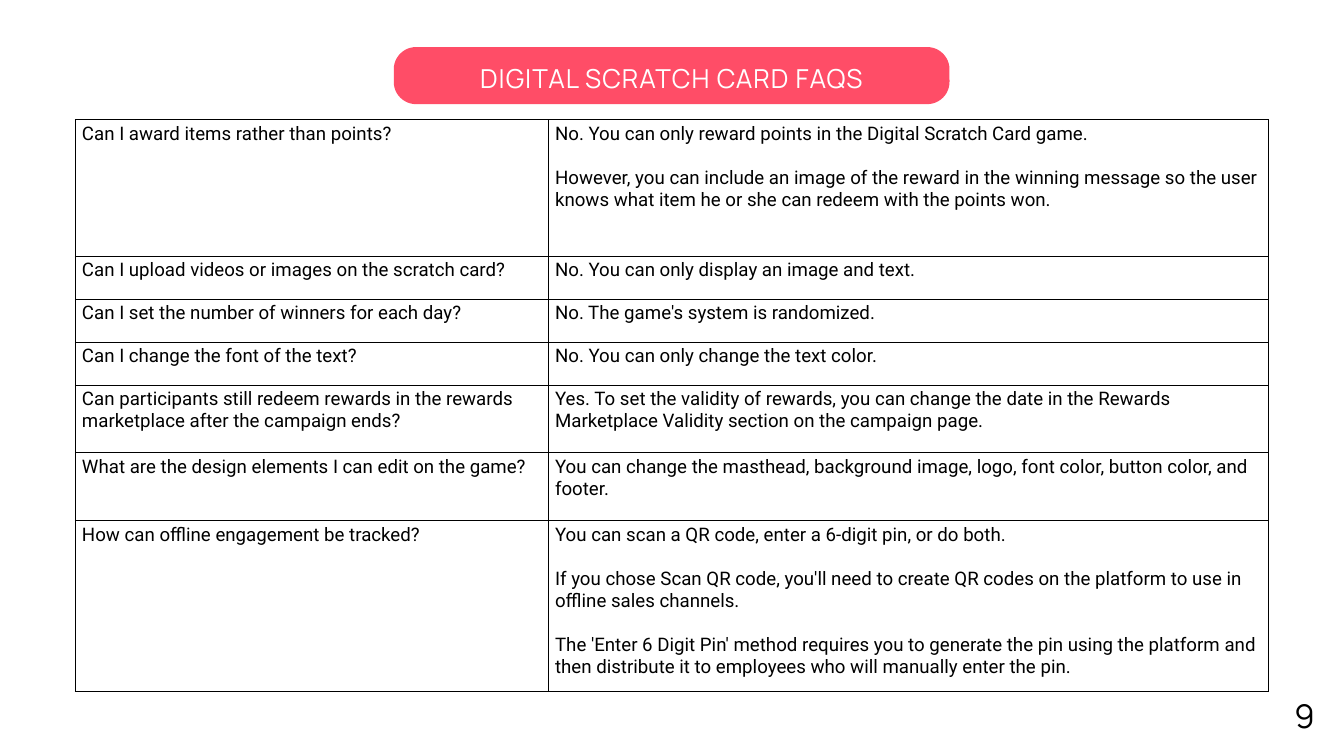
import pptx
import pptx.dml.color
import pptx.enum.shapes
import pptx.enum.text
import pptx.oxml
import pptx.oxml.ns
import pptx.util
from pptx.util import Inches

PINK = pptx.dml.color.RGBColor(0xFF, 0x4D, 0x67)
WHITE = pptx.dml.color.RGBColor(0xFF, 0xFF, 0xFF)
BLACK = pptx.dml.color.RGBColor(0x00, 0x00, 0x00)

FAQS = [
    (2.03, "Can I award items rather than points?",
     ["No. You can only reward points in the Digital Scratch Card game.",
      "However, you can include an image of the reward in the winning message so the user "
      "knows what item he or she can redeem with the points won."]),
    (0.64, "Can I upload videos or images on the scratch card?",
     ["No. You can only display an image and text."]),
    (0.64, "Can I set the number of winners for each day?",
     ["No. The game's system is randomized."]),
    (0.64, "Can I change the font of the text?",
     ["No. You can only change the text color."]),
    (1.01, "Can participants still redeem rewards in the rewards marketplace after the "
           "campaign ends?",
     ["Yes. To set the validity of rewards, you can change the date in the Rewards "
      "Marketplace Validity section on the campaign page."]),
    (1.01, "What are the design elements I can edit on the game?",
     ["You can change the masthead, background image, logo, font color, button color, "
      "and footer."]),
    (2.54, "How can offline engagement be tracked?",
     ["You can scan a QR code, enter a 6-digit pin, or do both.",
      "If you chose Scan QR code, you'll need to create QR codes on the platform to use in "
      "offline sales channels.",
      "The 'Enter 6 Digit Pin' method requires you to generate the pin using the platform "
      "and then distribute it to employees who will manually enter the pin."]),
]


def write_text(text_frame, paragraphs, size=20, font="Roboto", color=BLACK,
               align=pptx.enum.text.PP_ALIGN.LEFT, line_spacing=None, gap=0, tracking=None):
    """Fill the frame; gap is the space between paragraphs, tracking the letter spacing, in points."""
    for index, text in enumerate(paragraphs):
        paragraph = text_frame.add_paragraph() if index else text_frame.paragraphs[0]
        paragraph.alignment = align
        if line_spacing:
            paragraph.line_spacing = pptx.util.Pt(line_spacing)
        if index:
            paragraph.space_before = pptx.util.Pt(gap)
        run = paragraph.add_run()
        run.text = text
        run.font.size = pptx.util.Pt(size)
        run.font.name = font
        run.font.color.rgb = color
        if tracking:
            run._r.get_or_add_rPr().set("spc", str(round(tracking * 100)))


def add_borders(cell, color=BLACK, width=1.13):
    properties = cell._tc.get_or_add_tcPr()
    for index, side in enumerate(("lnL", "lnR", "lnT", "lnB")):
        properties.insert(index, pptx.oxml.parse_xml(
            f'<a:{side} {pptx.oxml.ns.nsdecls("a")} w="{pptx.util.Pt(width)}">'
            f'<a:solidFill><a:srgbClr val="{color}"/></a:solidFill></a:{side}>'))


presentation = pptx.Presentation()
presentation.slide_width = Inches(20)
presentation.slide_height = Inches(11.25)
slide = presentation.slides.add_slide(presentation.slide_layouts[5])

# Title on a pink pill
banner_box = Inches(5.86), Inches(0.7), Inches(8.27), Inches(0.85)
banner = slide.shapes.add_shape(pptx.enum.shapes.MSO_SHAPE.ROUNDED_RECTANGLE, *banner_box)
banner.adjustments[0] = 0.39
banner.shadow.inherit = False
banner.fill.solid()
banner.fill.fore_color.rgb = PINK
banner.line.fill.background()

title = slide.shapes.title
title.left, title.top, title.width, title.height = banner_box
title_frame = title.text_frame
title_frame.auto_size = pptx.enum.text.MSO_AUTO_SIZE.NONE
title_frame.vertical_anchor = pptx.enum.text.MSO_ANCHOR.MIDDLE
title_frame.margin_left = title_frame.margin_right = Inches(0.06)
title_frame.margin_top = title_frame.margin_bottom = Inches(0.06)
write_text(title_frame, ["DIGITAL SCRATCH CARD FAQS"], size=28, font="Manrope", color=WHITE,
           align=pptx.enum.text.PP_ALIGN.CENTER, line_spacing=39.2, tracking=1.1)
slide.shapes._spTree.append(title._element)  # bring the title in front of the pill

# Page number
page_number = slide.shapes.add_textbox(Inches(19.26), Inches(10.02), Inches(0.31), Inches(0.87))
number_frame = page_number.text_frame
number_frame.word_wrap = True
number_frame.margin_left = number_frame.margin_right = 0
number_frame.margin_top = number_frame.margin_bottom = 0
write_text(number_frame, ["9"], size=35, font="Manrope", line_spacing=66.5)

# Questions and answers
table = slide.shapes.add_table(len(FAQS), 2, Inches(1.12), Inches(1.78),
                               Inches(17.76), Inches(8.51)).table
table.first_row = False
table.horz_banding = False
table.columns[0].width = Inches(7.04)
table.columns[1].width = Inches(10.72)
for row, (height, question, answer) in enumerate(FAQS):
    table.rows[row].height = Inches(height)
    for column, paragraphs in enumerate(([question], answer)):
        cell = table.cell(row, column)
        cell.fill.background()
        add_borders(cell)
        write_text(cell.text_frame, paragraphs, gap=23.5)

presentation.save("out.pptx")
